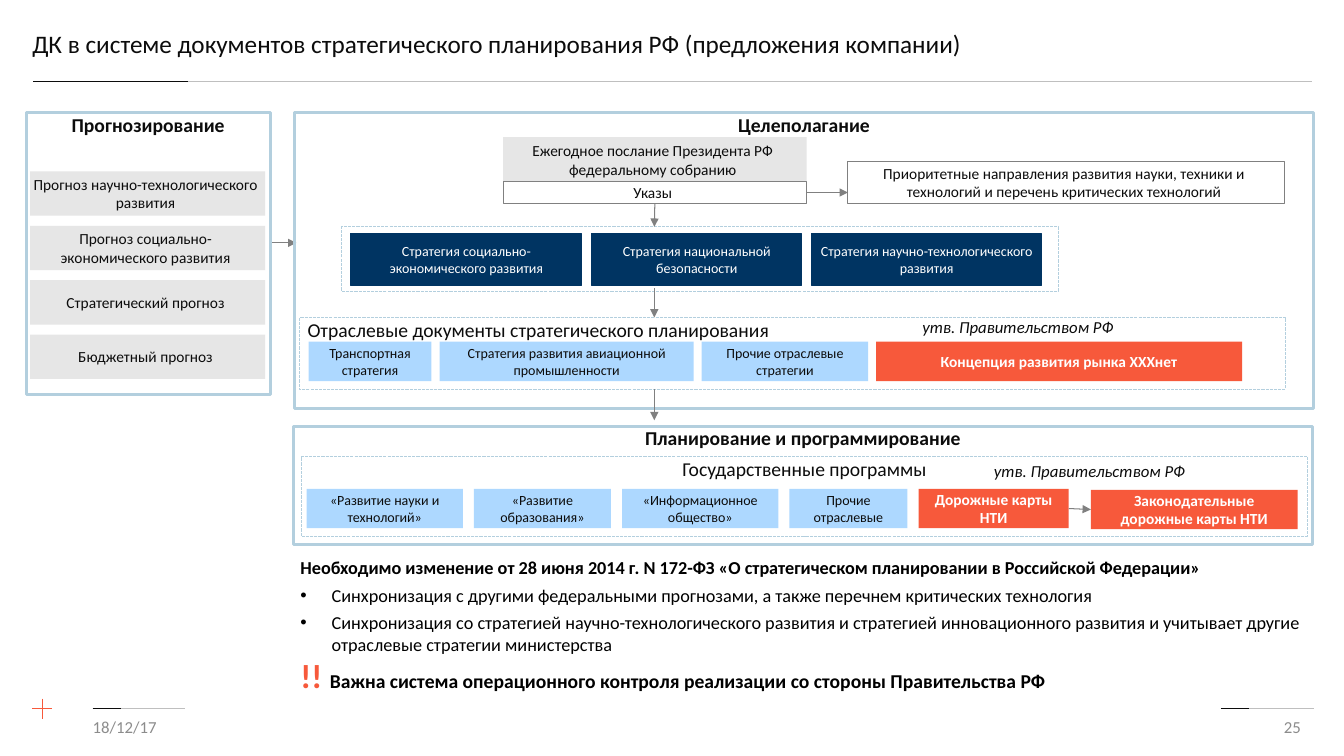
from collections import namedtuple

import lxml.etree
import pptx
import pptx.dml.color
import pptx.enum.dml
import pptx.enum.shapes
import pptx.enum.text
import pptx.oxml.ns
import pptx.util

Inches = pptx.util.Inches
Pt = pptx.util.Pt
RGBColor = pptx.dml.color.RGBColor
ALIGN = pptx.enum.text.PP_ALIGN
ANCHOR = pptx.enum.text.MSO_ANCHOR
qn = pptx.oxml.ns.qn

BLACK = RGBColor(0x00, 0x00, 0x00)
INK = RGBColor(0x0C, 0x0C, 0x0C)
WHITE = RGBColor(0xFF, 0xFF, 0xFF)
MUTED = RGBColor(0x8C, 0x8C, 0x8C)
GRAY = RGBColor(0x80, 0x80, 0x80)
RULE = RGBColor(0xBF, 0xBF, 0xBF)
PALE = RGBColor(0xE6, 0xE6, 0xE6)
FRAME = RGBColor(0xB3, 0xCF, 0xDE)
NAVY = RGBColor(0x00, 0x34, 0x62)
SKY = RGBColor(0xAD, 0xD8, 0xFF)
ORANGE = RGBColor(0xF7, 0x59, 0x3B)

FONT = "Calibri"
EVEN_INSETS = (0.08, 0.08, 0.08, 0.08)
NARROW_INSETS = (0, 0.08, 0.04, 0.08)
HEADING_INSETS = (0.08, 0, 0.08, 0)
APPROVAL = "утв. Правительством РФ"

Box = namedtuple("Box", "left top width height")  # inches
Look = namedtuple("Look", "fill line color size bold insets")

STRATEGY = Look(NAVY, NAVY, WHITE, 10, False, EVEN_INSETS)
SECTOR = Look(SKY, None, INK, 10, False, EVEN_INSETS)
KEY = Look(ORANGE, None, WHITE, 11, True, EVEN_INSETS)
FORECAST = Look(PALE, None, INK, 11, False, NARROW_INSETS)
DECREE = Look(WHITE, GRAY, INK, 11, False, NARROW_INSETS)


def inside(box, dx, dy, width, height):
    return Box(box.left + dx, box.top + dy, width, height)


def emu(box):
    return [Inches(length) for length in box]


def style_run(run, size, color, bold=False, italic=False):
    run.font.name = FONT
    run.font.size = Pt(size)
    run.font.color.rgb = color
    run.font.bold = bold
    run.font.italic = italic


def set_insets(frame, insets):
    (frame.margin_left, frame.margin_top,
     frame.margin_right, frame.margin_bottom) = [Inches(i) for i in insets]


def write(frame, text, size, color, bold=False, italic=False, align=ALIGN.LEFT):
    frame.text = text
    frame.paragraphs[0].alignment = align
    style_run(frame.paragraphs[0].runs[0], size, color, bold, italic)


def add_rectangle(slide, box):
    rectangle = slide.shapes.add_shape(
        pptx.enum.shapes.MSO_SHAPE.RECTANGLE, *emu(box))
    rectangle.shadow.inherit = False
    rectangle.text_frame.word_wrap = True
    return rectangle


def add_card(slide, box, text, look):
    card = add_rectangle(slide, box)
    card.fill.solid()
    card.fill.fore_color.rgb = look.fill
    if look.line is None:
        card.line.fill.background()
    else:
        card.line.color.rgb = look.line
        card.line.width = Pt(0.75)
    frame = card.text_frame
    frame.vertical_anchor = ANCHOR.MIDDLE
    set_insets(frame, look.insets)
    write(frame, text, look.size, look.color, look.bold, align=ALIGN.CENTER)
    return card


def add_row(slide, frame_box, dx, dy, height, gap, cards):
    """Places (text, width, look) cards left to right and returns the last one."""
    for text, width, look in cards:
        card = add_card(slide, inside(frame_box, dx, dy, width, height), text, look)
        dx += width + gap
    return card


def add_outline(slide, box, heading=None, dashed=False, align=ALIGN.CENTER):
    outline = add_rectangle(slide, box)
    outline.fill.background()
    outline.line.color.rgb = FRAME
    outline.line.width = Pt(0.75 if dashed else 2.25)
    if dashed:
        outline.line.dash_style = pptx.enum.dml.MSO_LINE.SQUARE_DOT
    if heading:
        outline.text_frame.vertical_anchor = ANCHOR.TOP
        set_insets(outline.text_frame, HEADING_INSETS)
        write(outline.text_frame, heading, 14, INK, not dashed, align=align)


def add_line(slide, x1, y1, x2, y2, color, width=0.5):
    line = slide.shapes.add_connector(
        pptx.enum.shapes.MSO_CONNECTOR.STRAIGHT,
        Inches(x1), Inches(y1), Inches(x2), Inches(y2))
    line.line.color.rgb = color
    line.line.width = Pt(width)
    lxml.etree.SubElement(line._element.spPr, qn("a:effectLst"))
    return line


def add_arrow(slide, x1, y1, x2, y2):
    arrow = add_line(slide, x1, y1, x2, y2, GRAY, 0.75)
    lxml.etree.SubElement(arrow.line._get_or_add_ln(), qn("a:tailEnd"), type="triangle")
    return arrow


def add_label(slide, box, text, size, color, italic=False, align=ALIGN.LEFT, wrap=True):
    frame = slide.shapes.add_textbox(*emu(box)).text_frame
    frame.word_wrap = wrap
    frame.vertical_anchor = ANCHOR.MIDDLE
    write(frame, text, size, color, italic=italic, align=align)


def add_rule(slide, left, top, length, accent):
    """Draws a light rule whose first part is dark."""
    for part, color in ((length, RULE), (accent, INK)):
        add_line(slide, left, top, left + part, top, color)


def build_header(slide, box):
    title = slide.shapes.title
    title.left, title.top, title.width, title.height = emu(box)
    title.text_frame.vertical_anchor = ANCHOR.MIDDLE
    title.text_frame.auto_size = pptx.enum.text.MSO_AUTO_SIZE.NONE
    write(title.text_frame,
          "ДК в системе документов стратегического планирования РФ (предложения компании)",
          18, INK)
    title.text_frame.paragraphs[0].line_spacing = 0.9
    add_rule(slide, box.left + 0.11, box.top + 0.72, 12.68, 1.53)


def build_footer(slide, box):
    x, y = box.left + 0.1, box.top + 0.1
    add_line(slide, x, y - 0.1, x, y + 0.1, ORANGE)
    add_line(slide, x - 0.1, y, x + 0.1, y, ORANGE)
    for dx in (0.6, 11.79):
        add_rule(slide, box.left + dx, y, 0.92, 0.28)
    add_label(slide, inside(box, 0.5, 0.08, 3, 0.4), "18/12/17", 12, MUTED)
    add_label(slide, inside(box, 9.68, 0.08, 3, 0.4), "25", 12, MUTED, align=ALIGN.RIGHT)


def build_forecasting(slide, box):
    add_outline(slide, box, "Прогнозирование")
    forecasts = ("Прогноз научно-технологического развития",
                 "Прогноз социально-экономического развития",
                 "Стратегический прогноз", "Бюджетный прогноз")
    for row, forecast in enumerate(forecasts):
        add_card(slide, inside(box, 0.04, 0.58 + 0.54 * row, 2.33, 0.44), forecast, FORECAST)
    y = box.top + 1.29
    add_arrow(slide, box.left + 2.44, y, box.left + 2.68, y)


def build_goals(slide, box):
    add_outline(slide, box, "Целеполагание")
    add_card(slide, inside(box, 2.07, 0.24, 3.01, 0.45),
             "Ежегодное послание Президента РФ федеральному собранию", FORECAST)
    decrees = add_card(slide, inside(box, 2.07, 0.68, 3.01, 0.22), "Указы", DECREE)
    add_card(slide, inside(box, 5.49, 0.48, 4.33, 0.42),
             "Приоритетные направления развития науки, техники и технологий "
             "и перечень критических технологий", DECREE)

    strategies = inside(box, 0.47, 1.13, 7.11, 0.64)
    add_outline(slide, strategies, dashed=True)
    add_row(slide, strategies, 0.09, 0.07, 0.51, 0.1, (
        ("Стратегия социально-экономического развития", 2.29, STRATEGY),
        ("Стратегия национальной безопасности", 2.08, STRATEGY),
        ("Стратегия научно-технологического развития", 2.28, STRATEGY)))

    sectors = inside(box, 0.05, 2.03, 9.78, 0.71)
    add_outline(slide, sectors, "Отраслевые документы стратегического планирования",
                dashed=True, align=ALIGN.LEFT)
    add_row(slide, sectors, 0.09, 0.24, 0.39, 0.08, (
        ("Транспортная стратегия", 1.22, SECTOR),
        ("Стратегия развития авиационной промышленности", 2.52, SECTOR),
        ("Прочие отраслевые стратегии", 1.65, SECTOR),
        ("Концепция развития рынка ХХХнет", 3.63, KEY)))
    add_label(slide, inside(sectors, 6.08, -0.06, 2.13, 0.3), APPROVAL, 12, INK,
              italic=True, wrap=False)

    y = box.top + 0.79
    add_arrow(slide, box.left + 5.08, y, box.left + 5.49, y).begin_connect(decrees, 3)
    x = box.left + 3.57
    add_arrow(slide, x, box.top + 0.9, x, strategies.top).begin_connect(decrees, 2)
    add_arrow(slide, x, box.top + 1.74, x, sectors.top)
    add_arrow(slide, x, sectors.top + sectors.height, x, box.top + 3.05)


def build_planning(slide, box):
    add_outline(slide, box, "Планирование и программирование")
    programmes = inside(box, 0.08, 0.3, 9.98, 0.79)
    add_outline(slide, programmes, "Государственные программы", dashed=True)
    roadmaps = add_row(slide, programmes, 0.05, 0.32, 0.39, 0.11, (
        ("«Развитие науки и технологий»", 1.55, SECTOR),
        ("«Развитие образования»", 1.36, SECTOR),
        ("«Информационное общество»", 1.55, SECTOR._replace(insets=(0.04, 0.08, 0.04, 0.08))),
        ("Прочие отраслевые", 1.17, SECTOR),
        ("Дорожные карты НТИ", 1.49, KEY)))
    laws = add_card(slide, inside(programmes, 7.83, 0.33, 2.05, 0.39),
                    "Законодательные дорожные карты НТИ", KEY)
    link = add_arrow(slide, box.left + 7.69, box.top + 0.81, box.left + 7.91, box.top + 0.83)
    link.begin_connect(roadmaps, 3)
    link.end_connect(laws, 1)
    add_label(slide, inside(programmes, 6.77, -0.01, 2.13, 0.3), APPROVAL, 12, INK,
              italic=True, wrap=False)


def set_bullet(paragraph, bulleted):
    properties = paragraph._p.get_or_add_pPr()
    indent = Inches(0.31) if bulleted else 0
    properties.set("marL", str(indent))
    properties.set("indent", str(-indent))
    if bulleted:
        lxml.etree.SubElement(properties, qn("a:buChar"), char="•")
    else:
        lxml.etree.SubElement(properties, qn("a:buNone"))


def build_conclusions(slide, box):
    body = slide.placeholders[1]
    body.left, body.top, body.width, body.height = emu(box)
    frame = body.text_frame
    frame.auto_size = pptx.enum.text.MSO_AUTO_SIZE.NONE
    frame.vertical_anchor = ANCHOR.TOP
    set_insets(frame, (0, 0, 0, 0))
    conclusions = (
        (False, 0, (("Необходимо изменение от 28 июня 2014 г. N 172-ФЗ «О стратегическом "
                     "планировании в Российской Федерации»", 13, BLACK, True),)),
        (True, 4, (("Синхронизация с другими федеральными прогнозами, а также перечнем "
                    "критических технология", 13, BLACK, False),)),
        (True, 4, (("Синхронизация со стратегией научно-технологического развития и стратегией "
                    "инновационного развития и учитывает другие отраслевые стратегии "
                    "министерства", 13, BLACK, False),)),
        (False, 0, (("!! ", 24, ORANGE, True),
                    ("Важна система операционного контроля реализации со стороны "
                     "Правительства РФ", 14, BLACK, True))))
    for index, (bulleted, space, pieces) in enumerate(conclusions):
        paragraph = frame.add_paragraph() if index else frame.paragraphs[0]
        set_bullet(paragraph, bulleted)
        paragraph.space_before = Pt(space)
        for text, size, color, bold in pieces:
            run = paragraph.add_run()
            run.text = text
            style_run(run, size, color, bold)


def main():
    presentation = pptx.Presentation()
    presentation.slide_width = Inches(13.33)
    presentation.slide_height = Inches(7.5)
    slide = presentation.slides.add_slide(presentation.slide_layouts[1])
    build_header(slide, Box(0.22, 0.09, 9.75, 0.72))
    build_forecasting(slide, Box(0.26, 1.12, 2.42, 2.79))
    build_goals(slide, Box(2.92, 1.12, 10.11, 2.93))
    build_planning(slide, Box(2.91, 4.23, 10.11, 1.17))
    build_conclusions(slide, Box(2.98, 5.52, 10.05, 1.55))
    build_footer(slide, Box(0.32, 6.93, 12.7, 0.48))
    presentation.save("out.pptx")


if __name__ == "__main__":
    main()
